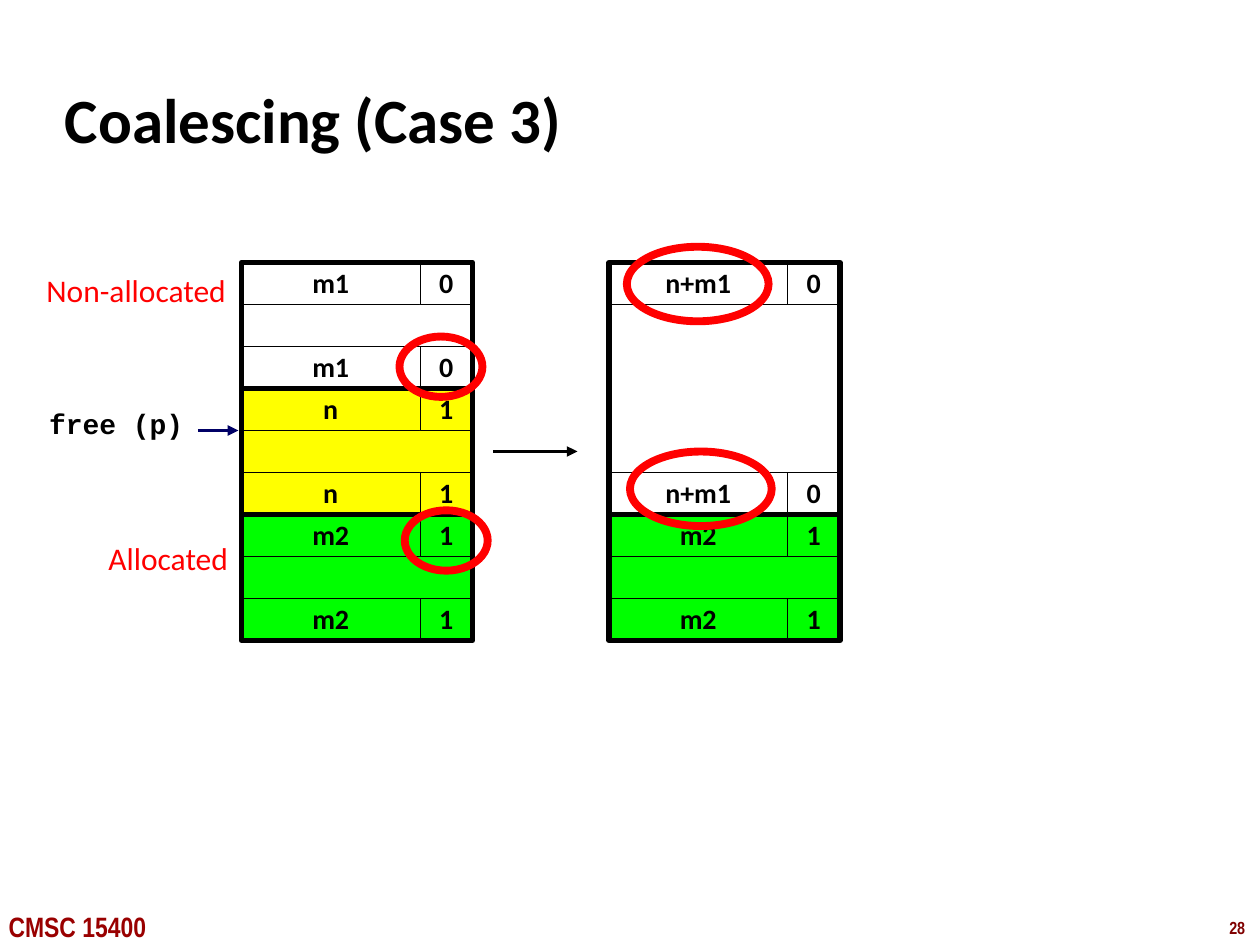
from dataclasses import dataclass
from typing import NamedTuple, Optional

from lxml.etree import SubElement
from pptx import Presentation
from pptx.dml.color import RGBColor
from pptx.enum.shapes import MSO_CONNECTOR, MSO_SHAPE
from pptx.enum.text import MSO_ANCHOR, MSO_AUTO_SIZE, PP_ALIGN
from pptx.oxml.ns import qn
from pptx.shapes.autoshape import Shape
from pptx.slide import Slide
from pptx.text.text import TextFrame
from pptx.util import Inches, Pt

GRID_COLUMNS = 120
GRID_ROWS = 90
SLIDE_WIDTH = Inches(10)
SLIDE_HEIGHT = Inches(7.5)
SIZE_COLUMNS = 17
FLAG_COLUMNS = 5
BLOCK_COLUMNS = SIZE_COLUMNS + FLAG_COLUMNS
WORD_ROWS = 4
HEAP_TOP = 25


@dataclass(frozen=True)
class Theme:
    black: str = "000000"
    free: str = "FFFFFF"
    released: str = "FFFF00"
    allocated: str = "00FF00"
    highlight: str = "FF0000"
    pointer: str = "000066"
    course: str = "990000"
    page: str = "800000"
    body_font: str = "Calibri"
    code_font: str = "Courier New"
    footer_font: str = "Arial Narrow"
    title_size: float = 36
    label_size: float = 18
    cell_size: float = 16
    page_size: float = 10
    cell_line: float = 0.25
    arrow_line: float = 2
    block_line: float = 3
    circle_line: float = 4.5


THEME = Theme()


class Area(NamedTuple):
    column: float
    row: float
    columns: float
    rows: float


class TextStyle(NamedTuple):
    size: float
    color: str
    font: str = THEME.body_font
    bold: bool = True
    align: PP_ALIGN = PP_ALIGN.LEFT
    line_spacing: float = 1.0


class Block(NamedTuple):
    size: str
    flag: str
    fill: str
    body_words: int = 1


class Heap(NamedTuple):
    column: float
    blocks: tuple[Block, ...]


class Label(NamedTuple):
    text: str
    area: Area
    style: TextStyle


class Arrow(NamedTuple):
    start: float
    end: float
    row: float
    color: str


CELL_STYLE = TextStyle(THEME.cell_size, THEME.black, align=PP_ALIGN.CENTER, line_spacing=0.98)
STATE_STYLE = TextStyle(THEME.label_size, THEME.highlight, bold=False, align=PP_ALIGN.RIGHT)

NEXT_BLOCK = Block("m2", "1", THEME.allocated)
HEAPS = (
    Heap(23, (Block("m1", "0", THEME.free), Block("n", "1", THEME.released), NEXT_BLOCK)),
    Heap(58, (Block("n+m1", "0", THEME.free, body_words=4), NEXT_BLOCK)),
)
TITLE = Label("Coalescing (Case 3)", Area(5, 7.5, 110, 7.5), TextStyle(THEME.title_size, THEME.black))
LABELS = (
    Label("28", Area(115.9, 86.75, 4.1, 3.2),
          TextStyle(THEME.page_size, THEME.page, THEME.footer_font)),
    Label("CMSC 15400", Area(-0.35, 86.05, 17, 4.45),
          TextStyle(THEME.cell_size, THEME.course, THEME.footer_font)),
    Label("Non-allocated", Area(1.9, 25.2, 20.8, 8.5), STATE_STYLE),
    Label("Allocated", Area(8.9, 50.75, 14, 4.8), STATE_STYLE),
    Label("free (p)", Area(3.5, 38.4, 15.35, 4.3),
          TextStyle(THEME.cell_size, THEME.black, THEME.code_font, line_spacing=0.94)),
)
ARROWS = (
    Arrow(47, 55, 43, THEME.black),
    Arrow(18.85, 22.7, 41, THEME.pointer),
)
CIRCLES = (
    Area(59.7, 23.5, 13.5, 7.1),
    Area(38.05, 32.05, 7.9, 5.75),
    Area(60, 43, 13.5, 7.1),
    Area(38.55, 48.6, 7.9, 5.75),
)


def across(columns: float) -> int:
    return round(SLIDE_WIDTH * columns / GRID_COLUMNS)


def down(rows: float) -> int:
    return round(SLIDE_HEIGHT * rows / GRID_ROWS)


def place(area: Area) -> tuple[int, int, int, int]:
    return across(area.column), down(area.row), across(area.columns), down(area.rows)


def write(frame: TextFrame, text: str, style: TextStyle) -> None:
    paragraph = frame.paragraphs[0]
    paragraph.alignment = style.align
    paragraph.line_spacing = style.line_spacing
    run = paragraph.add_run()
    run.text = text
    run.font.name = style.font
    run.font.size = Pt(style.size)
    run.font.bold = style.bold
    run.font.color.rgb = RGBColor.from_string(style.color)


def draw_shape(slide: Slide, kind: MSO_SHAPE, area: Area, line_color: str,
               line_width: float, fill: Optional[str] = None) -> Shape:
    shape = slide.shapes.add_shape(kind, *place(area))
    shape.shadow.inherit = False
    if fill is None:
        shape.fill.background()
    else:
        shape.fill.solid()
        shape.fill.fore_color.rgb = RGBColor.from_string(fill)
    shape.line.color.rgb = RGBColor.from_string(line_color)
    shape.line.width = Pt(line_width)
    return shape


def draw_cell(slide: Slide, area: Area, fill: str, text: str = "") -> None:
    cell = draw_shape(slide, MSO_SHAPE.RECTANGLE, area, THEME.black, THEME.cell_line, fill)
    if text:
        cell.text_frame.word_wrap = False
        cell.text_frame.vertical_anchor = MSO_ANCHOR.MIDDLE
        write(cell.text_frame, text, CELL_STYLE)


def draw_block(slide: Slide, block: Block, column: float, row: float) -> float:
    body_rows = block.body_words * WORD_ROWS
    footer_row = row + WORD_ROWS + body_rows
    end_row = footer_row + WORD_ROWS
    draw_cell(slide, Area(column, row + WORD_ROWS, BLOCK_COLUMNS, body_rows), block.fill)
    for word_row in (row, footer_row):
        draw_cell(slide, Area(column, word_row, SIZE_COLUMNS, WORD_ROWS), block.fill, block.size)
        draw_cell(slide, Area(column + SIZE_COLUMNS, word_row, FLAG_COLUMNS, WORD_ROWS),
                  block.fill, block.flag)
    draw_shape(slide, MSO_SHAPE.RECTANGLE, Area(column, row, BLOCK_COLUMNS, end_row - row),
               THEME.black, THEME.block_line)
    return end_row


def draw_heap(slide: Slide, heap: Heap) -> None:
    row = HEAP_TOP
    for block in heap.blocks:
        row = draw_block(slide, block, heap.column, row)


def draw_label(slide: Slide, label: Label) -> TextFrame:
    frame = slide.shapes.add_textbox(*place(label.area)).text_frame
    frame.word_wrap = False
    frame.auto_size = MSO_AUTO_SIZE.SHAPE_TO_FIT_TEXT
    write(frame, label.text, label.style)
    return frame


def draw_title(slide: Slide, title: Label) -> None:
    frame = draw_label(slide, title)
    frame.word_wrap = True
    frame.auto_size = MSO_AUTO_SIZE.NONE
    frame.vertical_anchor = MSO_ANCHOR.MIDDLE


def draw_arrow(slide: Slide, arrow: Arrow) -> None:
    connector = slide.shapes.add_connector(
        MSO_CONNECTOR.STRAIGHT, across(arrow.start), down(arrow.row), across(arrow.end), down(arrow.row))
    connector.line.color.rgb = RGBColor.from_string(arrow.color)
    connector.line.width = Pt(THEME.arrow_line)
    SubElement(connector.line._get_or_add_ln(), qn("a:tailEnd"), type="triangle")
    SubElement(connector._element.spPr, qn("a:effectLst"))


def main() -> None:
    presentation = Presentation()
    presentation.slide_width = SLIDE_WIDTH
    presentation.slide_height = SLIDE_HEIGHT
    slide = presentation.slides.add_slide(presentation.slide_layouts[6])
    draw_title(slide, TITLE)
    for heap in HEAPS:
        draw_heap(slide, heap)
    for label in LABELS:
        draw_label(slide, label)
    for arrow in ARROWS:
        draw_arrow(slide, arrow)
    for circle in CIRCLES:
        draw_shape(slide, MSO_SHAPE.OVAL, circle, THEME.highlight, THEME.circle_line)
    presentation.save("out.pptx")


if __name__ == "__main__":
    main()
